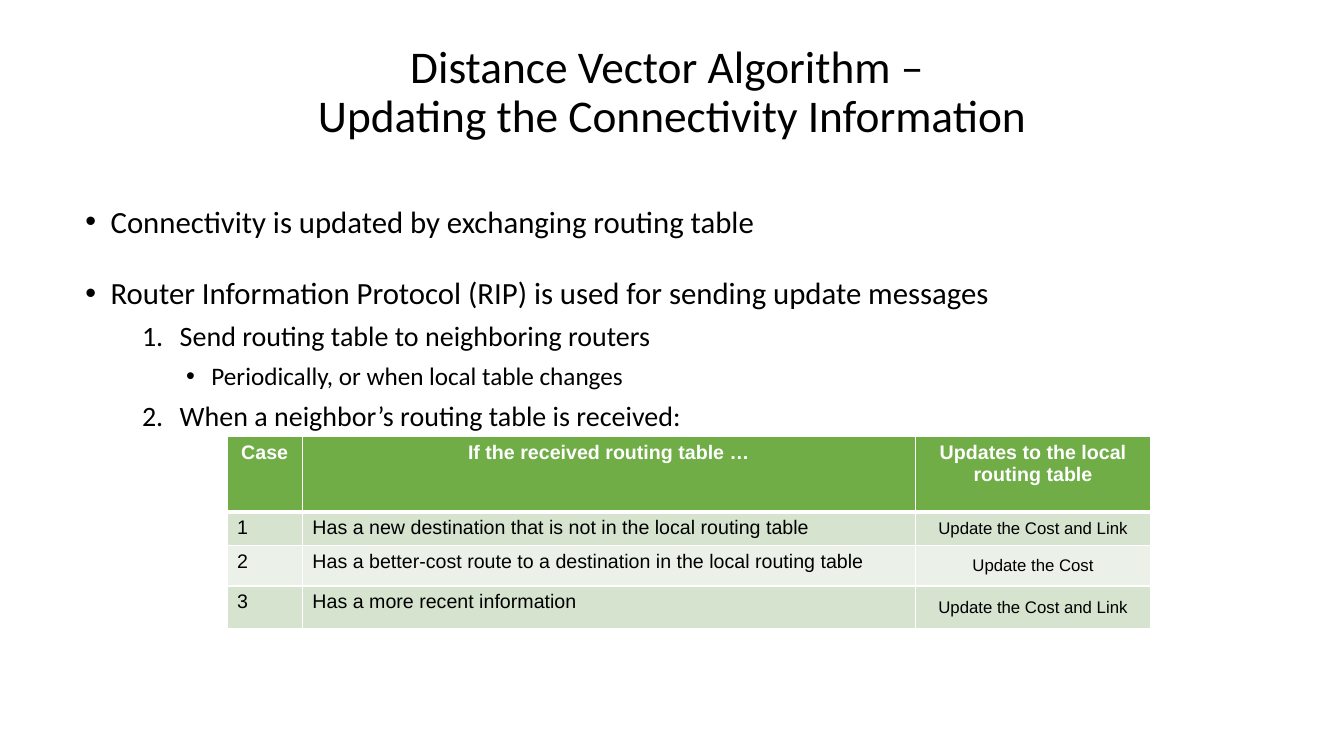
from lxml import etree
from pptx import Presentation
from pptx import util as u
from pptx.dml.color import RGBColor
from pptx.enum import text
from pptx.oxml import ns

BLACK, WHITE, GREEN = "000000", "FFFFFF", "70AD47"
BANDS = ("D5E3CF", "EBF1E9")
TITLE = ("Distance Vector Algorithm – ", "Updating the Connectivity Information")
OUTLINE = [
    (0, "Connectivity is updated by exchanging routing table", 0),
    (0, "Router Information Protocol (RIP) is used for sending update messages", 27),
    (1, "Send routing table to neighboring routers", 8),
    (2, "Periodically, or when local table changes", 8),
    (1, "When a neighbor’s routing table is received:", 8),
]
LEVELS = [
    (22, 0.64, 0.64, "buChar", {"char": "•"}),
    (20, 2.38, 0.95, "buAutoNum", {"type": "arabicPeriod"}),
    (18, 3.18, 0.64, "buChar", {"char": "•"}),
]
CASES = [
    ("Case", "If the received routing table …", "Updates to the local routing table"),
    ("1", "Has a new destination that is not in the local routing table", "Update the Cost and Link"),
    ("2", "Has a better-cost route to a destination in the local routing table", "Update the Cost"),
    ("3", "Has a more recent information", "Update the Cost and Link"),
]
COLUMN_WIDTHS = (1.9, 15.45, 5.93)
ROW_HEIGHTS = (1.9, 0.84, 1.02, 1.07)


def rgb(value):
    """Turn a hex string into a colour."""
    return RGBColor.from_string(value)


def add_run(paragraph, words, size, font="Calibri", color=BLACK, bold=False):
    """Add one formatted run to a paragraph."""
    run = paragraph.add_run()
    run.text = words
    run.font.size, run.font.name, run.font.bold = u.Pt(size), font, bold
    run.font.color.rgb = rgb(color)


def add_frame(slide, box, anchor):
    """Add a wrapping text box and return its text frame."""
    frame = slide.shapes.add_textbox(*map(u.Cm, box)).text_frame
    frame.word_wrap = True
    frame.vertical_anchor = anchor
    return frame


def add_title(slide, box):
    """Place the two-line centred title in the box."""
    paragraph = add_frame(slide, box, text.MSO_ANCHOR.MIDDLE).paragraphs[0]
    paragraph.alignment = text.PP_ALIGN.CENTER
    paragraph.line_spacing = 0.9
    for index, line in enumerate(TITLE):
        if index:
            paragraph.add_line_break()
        add_run(paragraph, line, 32.4)


def add_outline(slide, box):
    """Place the bulleted and numbered outline in the box."""
    frame = add_frame(slide, box, text.MSO_ANCHOR.TOP)
    for index, (level, words, space) in enumerate(OUTLINE):
        size, margin, hanging, tag, marker = LEVELS[level]
        paragraph = frame.add_paragraph() if index else frame.paragraphs[0]
        paragraph.level = level
        properties = paragraph._p.get_or_add_pPr()
        properties.set("marL", str(u.Cm(margin)))
        properties.set("indent", str(-u.Cm(hanging)))
        etree.SubElement(properties, ns.qn("a:buFont"), typeface="Arial" if tag == "buChar" else "Calibri")
        etree.SubElement(properties, ns.qn("a:" + tag), **marker)
        paragraph.line_spacing = 0.9
        paragraph.space_before = u.Pt(space)
        add_run(paragraph, words, size)


def add_borders(cell, widths):
    """Draw white borders of the given point widths on a cell."""
    properties = cell._tc.get_or_add_tcPr()
    for side, width in widths.items():
        line = etree.SubElement(properties, ns.qn("a:ln" + side), w=str(u.Pt(width)))
        fill = etree.SubElement(line, ns.qn("a:solidFill"))
        etree.SubElement(fill, ns.qn("a:srgbClr"), val=WHITE)


def add_case_table(slide, left, top):
    """Place the table of update cases with its corner at left, top."""
    size = (sum(COLUMN_WIDTHS), sum(ROW_HEIGHTS))
    table = slide.shapes.add_table(
        len(CASES), len(COLUMN_WIDTHS), *map(u.Cm, (left, top, *size))).table
    table.horz_banding = False
    for column, width in zip(table.columns, COLUMN_WIDTHS):
        column.width = u.Cm(width)
    for row, height in zip(table.rows, ROW_HEIGHTS):
        row.height = u.Cm(height)
    for r, case in enumerate(CASES):
        header = r == 0
        for c, words in enumerate(case):
            cell, update = table.cell(r, c), c == 2 and not header
            add_borders(cell, {"L": 1, "R": 1, "T": 3 if r == 1 else 1, "B": 3 if header else 1})
            cell.fill.solid()
            cell.fill.fore_color.rgb = rgb(GREEN if header else BANDS[(r - 1) % 2])
            cell.vertical_anchor = text.MSO_ANCHOR.MIDDLE if update else text.MSO_ANCHOR.TOP
            paragraph = cell.text_frame.paragraphs[0]
            paragraph.alignment = text.PP_ALIGN.CENTER if header or update else text.PP_ALIGN.LEFT
            add_run(paragraph, words, 12 if update else 14, "Arial", WHITE if header else BLACK, header)


def main():
    """Build the slide and save it."""
    presentation = Presentation()
    presentation.slide_width, presentation.slide_height = u.Cm(33.87), u.Cm(19.05)
    slide = presentation.slides.add_slide(presentation.slide_layouts[6])
    add_title(slide, (5.51, 0.89, 22.86, 2.92))
    add_outline(slide, (1.9, 5.08, 23.92, 12.57))
    add_case_table(slide, 5.72, 11)
    presentation.save("out.pptx")


if __name__ == "__main__":
    main()
